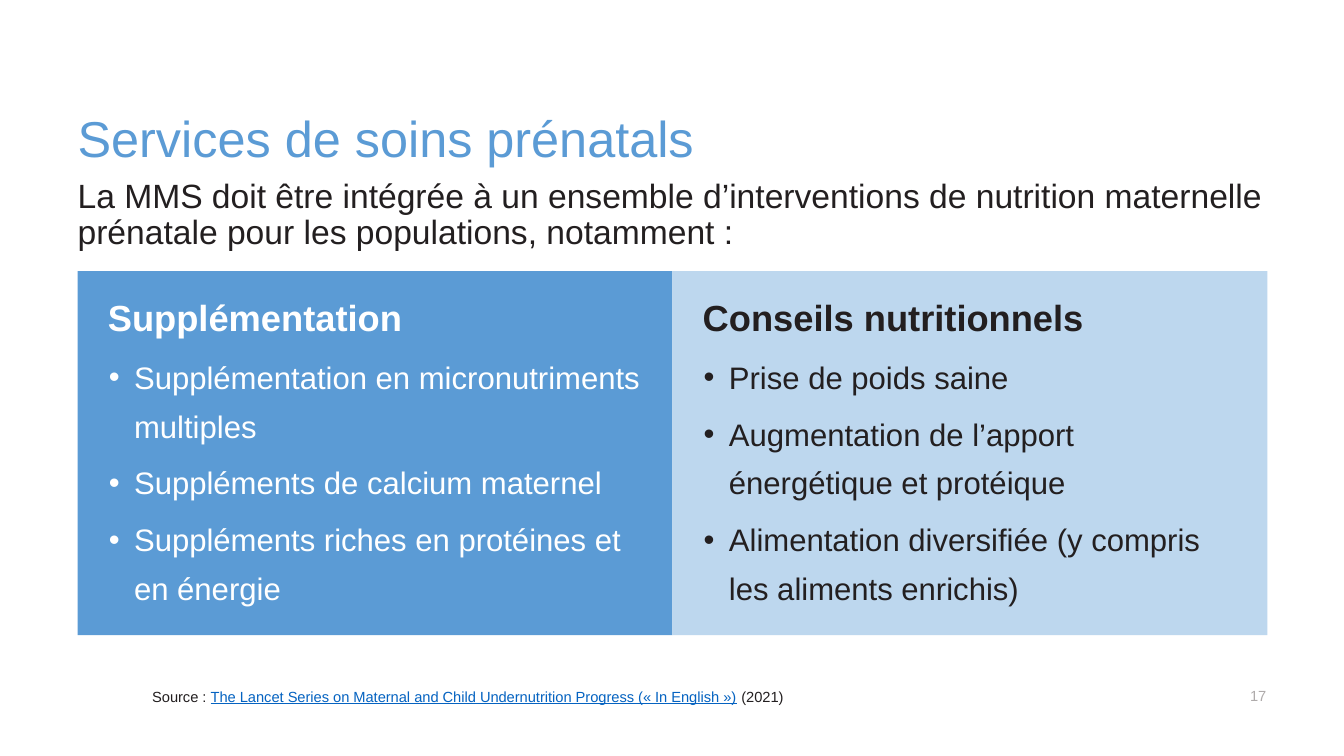
from dataclasses import dataclass

import pptx
import pptx.dml.color
import pptx.enum.shapes
import pptx.enum.text
import pptx.oxml
import pptx.oxml.ns
import pptx.util
from pptx.slide import Slide

PX = 9144  # 100 px to the inch
ALIGN = pptx.enum.text.PP_ALIGN
ANCHOR = pptx.enum.text.MSO_ANCHOR


@dataclass(frozen=True)
class Theme:
    font: str = "Arial"
    blue: str = "5B9BD5"
    pale: str = "BDD7EE"
    ink: str = "231F20"
    white: str = "FFFFFF"
    grey: str = "AFABAB"
    link: str = "0563C1"
    title: float = 36
    intro: float = 24
    heading: float = 25.9
    item: float = 22.2
    small: float = 10.5


THEME = Theme()


@dataclass(frozen=True)
class Box:
    x: int
    y: int
    w: int
    h: int

    def emu(self) -> list[int]:
        return [v * PX for v in (self.x, self.y, self.w, self.h)]


@dataclass(frozen=True)
class Run:
    text: str
    color: str
    size: float
    bold: bool = False
    underline: bool = False


@dataclass(frozen=True)
class Para:
    runs: list[Run]
    spacing: float = 1.0
    before: int = 0
    align: ALIGN = ALIGN.LEFT
    bullet: bool = False


@dataclass(frozen=True)
class Label:
    box: Box
    para: Para
    anchor: ANCHOR


@dataclass(frozen=True)
class Panel:
    fill: str
    color: str
    heading: str
    items: list[str]


def add_bullet(p, indent: int = 25, left: int = 26) -> None:
    pPr = p._p.get_or_add_pPr()
    pPr.set("marL", str(left * PX))
    pPr.set("indent", str(-indent * PX))
    ns = pptx.oxml.ns.nsdecls("a")
    for xml in (f'<a:buFont {ns} typeface="{THEME.font}"/>', f'<a:buChar {ns} char="•"/>'):
        pPr.append(pptx.oxml.parse_xml(xml))


def write(tf, paras: list[Para], anchor: ANCHOR, inset: int = 0) -> None:
    frame = dict(word_wrap=True, vertical_anchor=anchor)
    for side in ("left", "top", "right", "bottom"):
        frame[f"margin_{side}"] = inset * PX
    for name, value in frame.items():
        setattr(tf, name, value)
    for i, para in enumerate(paras):
        p = tf.add_paragraph() if i else tf.paragraphs[0]
        if para.bullet:
            add_bullet(p)
        layout = dict(alignment=para.align, line_spacing=para.spacing,
                      space_before=pptx.util.Pt(para.before))
        for name, value in layout.items():
            setattr(p, name, value)
        for run in para.runs:
            r = p.add_run()
            r.text = run.text
            style = dict(name=THEME.font, size=pptx.util.Pt(run.size),
                         bold=run.bold, underline=run.underline)
            for name, value in style.items():
                setattr(r.font, name, value)
            r.font.color.rgb = pptx.dml.color.RGBColor.from_string(run.color)


def draw_label(s: Slide, label: Label) -> None:
    sp = s.shapes.add_textbox(*label.box.emu())
    write(sp.text_frame, [label.para], label.anchor)


def draw_panel(s: Slide, panel: Panel, box: Box) -> None:
    sp = s.shapes.add_shape(pptx.enum.shapes.MSO_SHAPE.RECTANGLE, *box.emu())
    sp.shadow.inherit = False
    sp.fill.solid()
    sp.fill.fore_color.rgb = pptx.dml.color.RGBColor.from_string(panel.fill)
    sp.line.fill.background()
    paras = [Para([Run(panel.heading, panel.color, THEME.heading, bold=True)], 0.9)]
    paras += [Para([Run(item, panel.color, THEME.item)], 1.3, 6, bullet=True)
              for item in panel.items]
    write(sp.text_frame, paras, ANCHOR.MIDDLE, inset=30)


LEFT, WIDTH = 77, 1180
LABELS = [
    Label(Box(LEFT, 32, WIDTH, 135),
          Para([Run("Services de soins prénatals", THEME.blue, THEME.title)], 0.9),
          ANCHOR.BOTTOM),
    Label(Box(LEFT, 178, WIDTH, 79),
          Para([Run("La MMS doit être intégrée à un ensemble d’interventions de nutrition "
                    "maternelle prénatale pour les populations, notamment :",
                    THEME.ink, THEME.intro)], 0.9),
          ANCHOR.TOP),
    Label(Box(151, 670, 646, 40),
          Para([Run("Source : ", THEME.ink, THEME.small),
                Run("The Lancet Series on Maternal and Child Undernutrition Progress "
                    "(« In English »)", THEME.link, THEME.small, underline=True),
                Run(" (2021)", THEME.ink, THEME.small)], 1.1),
          ANCHOR.MIDDLE),
    Label(Box(1222, 670, 34, 40),
          Para([Run("17", THEME.grey, THEME.small)], align=ALIGN.RIGHT),
          ANCHOR.MIDDLE),
]
PANELS = [
    Panel(THEME.blue, THEME.white, "Supplémentation",
          ["Supplémentation en micronutriments multiples",
           "Suppléments de calcium maternel",
           "Suppléments riches en protéines et en énergie"]),
    Panel(THEME.pale, THEME.ink, "Conseils nutritionnels",
          ["Prise de poids saine",
           "Augmentation de l’apport énergétique et protéique",
           "Alimentation diversifiée (y compris les aliments enrichis)"]),
]


def main() -> None:
    prs = pptx.Presentation()
    prs.slide_width, prs.slide_height = 1333 * PX, 750 * PX
    s = prs.slides.add_slide(prs.slide_layouts[6])
    for label in LABELS:
        draw_label(s, label)
    panel_width = WIDTH // len(PANELS)
    for i, panel in enumerate(PANELS):
        draw_panel(s, panel, Box(LEFT + i * panel_width, 269, panel_width, 361))
    prs.save("out.pptx")


if __name__ == "__main__":
    main()
